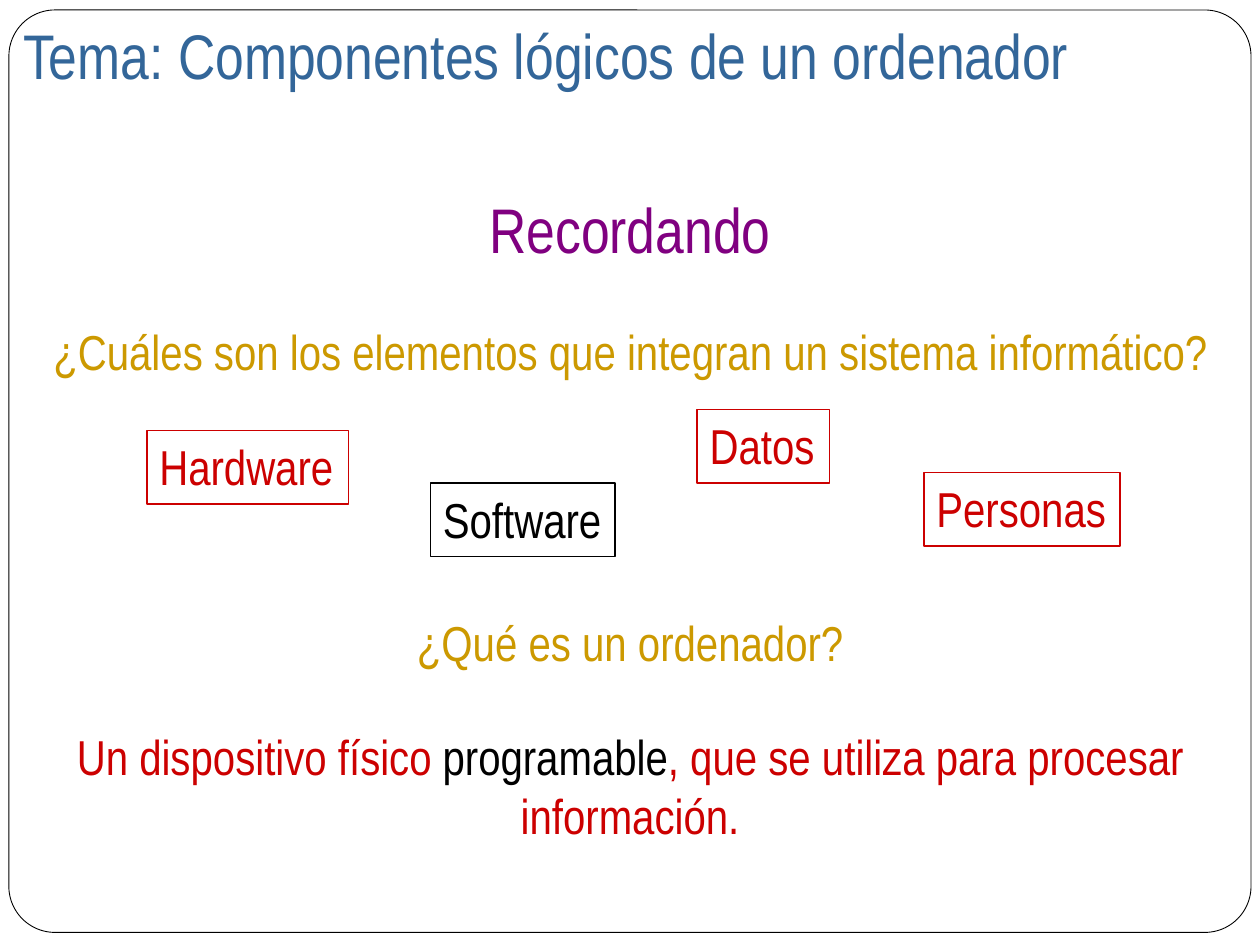
from pptx import Presentation
from pptx.dml.color import RGBColor
from pptx.enum.shapes import MSO_SHAPE
from pptx.enum.text import MSO_ANCHOR, MSO_AUTO_SIZE, PP_ALIGN
from pptx.util import Inches, Pt

FONT = "Arial Narrow"
WHITE = RGBColor(0xFF, 0xFF, 0xFF)
BLACK = RGBColor(0x00, 0x00, 0x00)
BLUE = RGBColor(0x33, 0x66, 0x99)
PURPLE = RGBColor(0x80, 0x00, 0x80)
GOLD = RGBColor(0xCC, 0x99, 0x00)
RED = RGBColor(0xCC, 0x00, 0x00)

presentation = Presentation()
presentation.slide_width = Inches(10)
presentation.slide_height = Inches(7.5)
slide = presentation.slides.add_slide(presentation.slide_layouts[5])

# Grid of 120 columns by 90 rows
COLUMN = presentation.slide_width / 120
ROW = presentation.slide_height / 90


def place(shape, left, top, width, height):
    shape.left, shape.top = round(left * COLUMN), round(top * ROW)
    shape.width, shape.height = round(width * COLUMN), round(height * ROW)


def write(shape, parts, size, alignment, wrap=True):
    frame = shape.text_frame
    frame.word_wrap = wrap
    frame.auto_size = MSO_AUTO_SIZE.SHAPE_TO_FIT_TEXT
    frame.vertical_anchor = MSO_ANCHOR.TOP
    paragraph = frame.paragraphs[0]
    paragraph.alignment = alignment
    for text, color in parts:
        run = paragraph.add_run()
        run.text = text
        run.font.name = FONT
        run.font.size = Pt(size)
        run.font.color.rgb = color


# Rounded frame, behind everything else
frame_shape = slide.shapes.add_shape(MSO_SHAPE.ROUNDED_RECTANGLE, 0, 0, 0, 0)
place(frame_shape, 0.85, 0.95, 118.3, 87.85)
frame_shape.adjustments[0] = 0.05
frame_shape.shadow.inherit = False
frame_shape.fill.solid()
frame_shape.fill.fore_color.rgb = WHITE
frame_shape.line.color.rgb = BLACK
frame_shape.line.width = Pt(0.5)

# Title, brought in front of the frame
title = slide.shapes.title
frame_shape.element.addnext(title.element)
place(title, 1, 1, 117, 8.4)
write(title, [("Tema: Componentes lógicos de un ordenador", BLUE)], 36, PP_ALIGN.LEFT)

# Centred lines: column, row, height, size, coloured parts
lines = [
    (2, 17.6, 8.4, 36, [("Recordando", PURPLE)]),
    (3, 30, 6.8, 28,
     [("¿Cuáles son los elementos que integran un sistema informático?", GOLD)]),
    (3, 57.7, 6.8, 28, [("¿Qué es un ordenador?", GOLD)]),
    (2, 68.6, 12.4, 28,
     [("Un dispositivo físico ", RED), ("programable", BLACK),
      (", que se utiliza para procesar información.", RED)]),
]
for left, top, height, size, parts in lines:
    text_box = slide.shapes.add_textbox(0, 0, 0, 0)
    place(text_box, left, top, 120 - 2 * left, height)
    write(text_box, parts, size, PP_ALIGN.CENTER)

# Boxed elements: text, column, row, width, colour
elements = [
    ("Hardware", 14, 41, 19.2, RED),
    ("Software", 41, 46, 17.6, BLACK),
    ("Datos", 66.4, 39, 12.6, RED),
    ("Personas", 88, 45, 18.7, RED),
]
for text, left, top, width, color in elements:
    box = slide.shapes.add_shape(MSO_SHAPE.RECTANGLE, 0, 0, 0, 0)
    place(box, left, top, width, 7)
    box.shadow.inherit = False
    box.fill.background()
    box.line.color.rgb = color
    box.line.width = Pt(1)
    write(box, [(text, color)], 28, PP_ALIGN.LEFT, wrap=False)

presentation.save("out.pptx")
